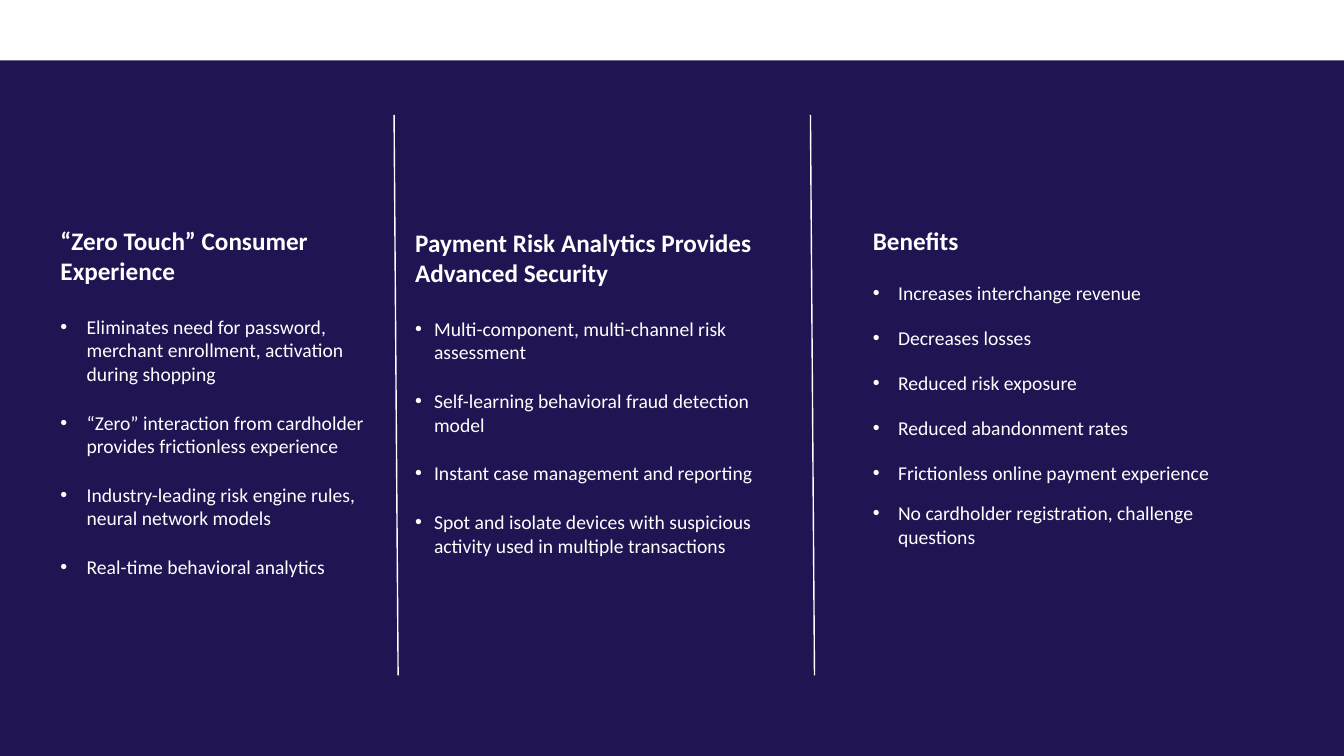
from dataclasses import dataclass

from lxml.etree import SubElement
from pptx import Presentation
from pptx.dml.color import RGBColor
from pptx.enum.shapes import MSO_CONNECTOR, MSO_SHAPE
from pptx.enum.text import MSO_ANCHOR
from pptx.oxml.ns import qn
from pptx.slide import Slide
from pptx.util import Pt


@dataclass(frozen=True)
class Theme:
    navy: RGBColor = RGBColor(0x20, 0x15, 0x52)
    white: RGBColor = RGBColor(0xFF, 0xFF, 0xFF)
    font: str = "Calibri"
    head: float = 18
    body: float = 14
    rule: float = 1


@dataclass(frozen=True)
class Item:
    text: str
    leading: float = 1.0


@dataclass(frozen=True)
class Column:
    left: float
    top: float
    width: float
    height: float
    head: str
    indent: float
    gap: float
    items: tuple[Item, ...]


THEME = Theme()
WIDTH, HEIGHT = 960, 540
PANEL_TOP = 43.2
RULE_TOP, RULE_END, RULE_LEAN = 82.1, 482.4, 2.9
RULES = (281.5, 578.9)

COLUMNS = (
    Column(43.2, 160.6, 238.3, 255, "“Zero Touch” Consumer Experience", 18.7, 18, (
        Item("Eliminates need for password, merchant enrollment, activation during shopping"),
        Item("“Zero” interaction from cardholder provides frictionless experience"),
        Item("Industry-leading risk engine rules, neural network models"),
        Item("Real-time behavioral analytics"),
    )),
    Column(296.6, 162, 273.6, 250, "Payment Risk Analytics Provides Advanced Security", 13.5, 18, (
        Item("Multi-component, multi-channel risk assessment"),
        Item("Self-learning behavioral fraud detection model"),
        Item("Instant case management and reporting"),
        Item("Spot and isolate devices with suspicious activity used in multiple transactions"),
    )),
    Column(623.5, 160.6, 260.6, 233.3, "Benefits", 18, 12, (
        Item("Increases interchange revenue", 1.2),
        Item("Decreases losses", 1.2),
        Item("Reduced risk exposure", 1.2),
        Item("Reduced abandonment rates", 1.2),
        Item("Frictionless online payment experience", 1.2),
        Item("No cardholder registration, challenge questions"),
    )),
)


def assign(target: object, values: dict[str, object]) -> None:
    for name, value in values.items():
        setattr(target, name, value)


def style(para, size: float, bold: bool) -> None:
    assign(para.font, {"name": THEME.font, "size": Pt(size), "bold": bold})
    para.font.color.rgb = THEME.white


def add_bullet(para, indent: float) -> None:
    props = para._p.get_or_add_pPr()
    props.set("marL", str(Pt(indent)))
    props.set("indent", str(-Pt(indent)))
    SubElement(props, qn("a:buFont"), typeface="Arial")
    SubElement(props, qn("a:buChar"), char="•")


def add_panel(slide: Slide) -> None:
    panel = slide.shapes.add_shape(
        MSO_SHAPE.RECTANGLE, 0, Pt(PANEL_TOP), Pt(WIDTH), Pt(HEIGHT - PANEL_TOP))
    panel.shadow.inherit = False
    panel.fill.solid()
    panel.fill.fore_color.rgb = THEME.navy
    panel.line.fill.background()


def add_rule(slide: Slide, left: float) -> None:
    """Draw a divider that leans slightly to the right at its foot."""
    rule = slide.shapes.add_connector(
        MSO_CONNECTOR.STRAIGHT, Pt(left), Pt(RULE_TOP), Pt(left + RULE_LEAN), Pt(RULE_END))
    rule.line.color.rgb = THEME.white
    rule.line.width = Pt(THEME.rule)
    SubElement(rule._element.spPr, qn("a:effectLst"))


def add_column(slide: Slide, column: Column) -> None:
    box = slide.shapes.add_textbox(
        Pt(column.left), Pt(column.top), Pt(column.width), Pt(column.height))
    frame = box.text_frame
    assign(frame, {
        "word_wrap": True, "vertical_anchor": MSO_ANCHOR.TOP,
        "margin_left": 0, "margin_top": 0, "margin_right": 0, "margin_bottom": 0,
    })
    head = frame.paragraphs[0]
    head.text = column.head
    head.space_after = Pt(3)
    style(head, THEME.head, True)
    for item in column.items:
        para = frame.add_paragraph()
        para.text = item.text
        assign(para, {"line_spacing": item.leading, "space_before": Pt(column.gap)})
        add_bullet(para, column.indent)
        style(para, THEME.body, False)


def main() -> None:
    deck = Presentation()
    assign(deck, {"slide_width": Pt(WIDTH), "slide_height": Pt(HEIGHT)})
    slide = deck.slides.add_slide(deck.slide_layouts[6])
    add_panel(slide)
    for left in RULES:
        add_rule(slide, left)
    for column in COLUMNS:
        add_column(slide, column)
    deck.save("out.pptx")


if __name__ == "__main__":
    main()
